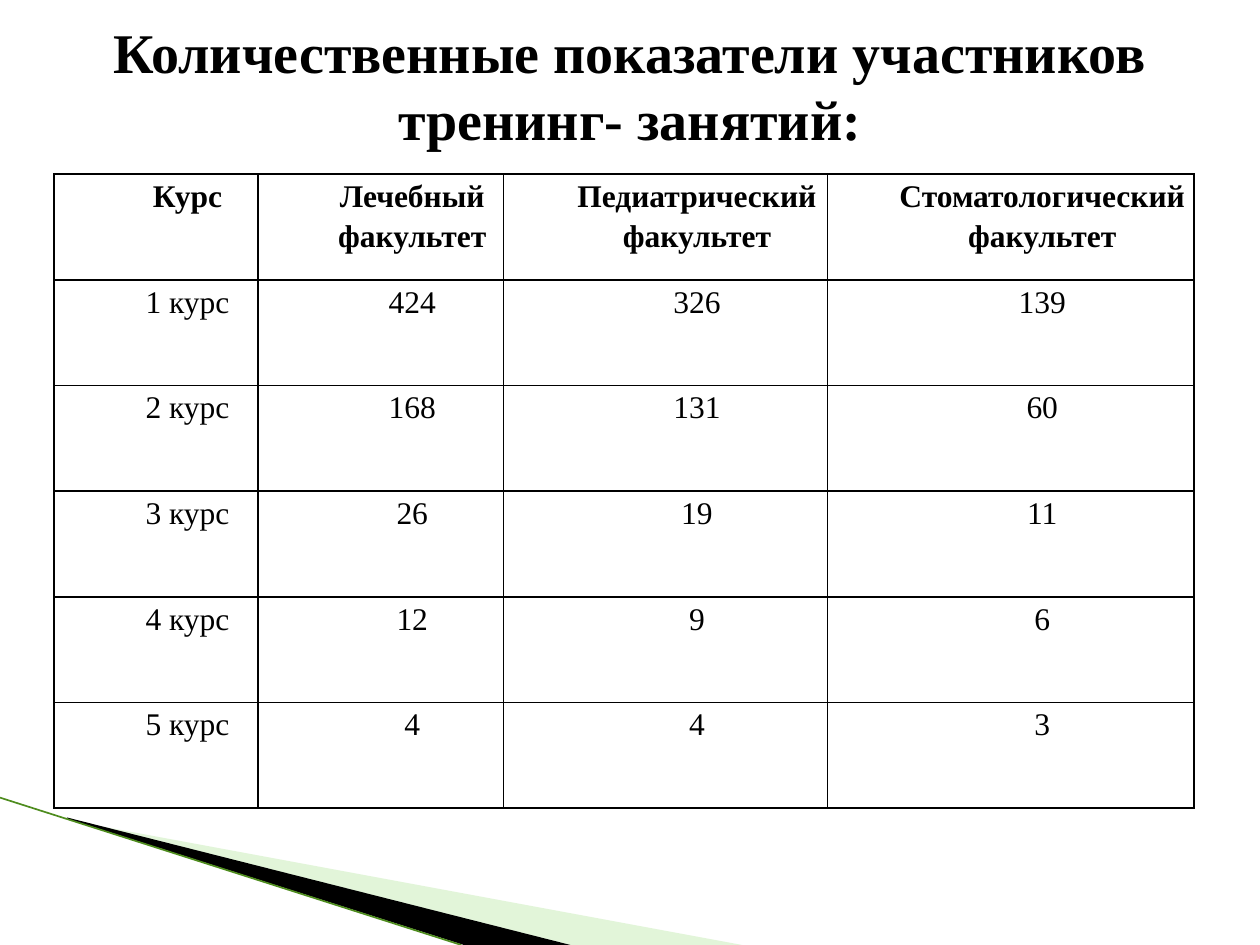
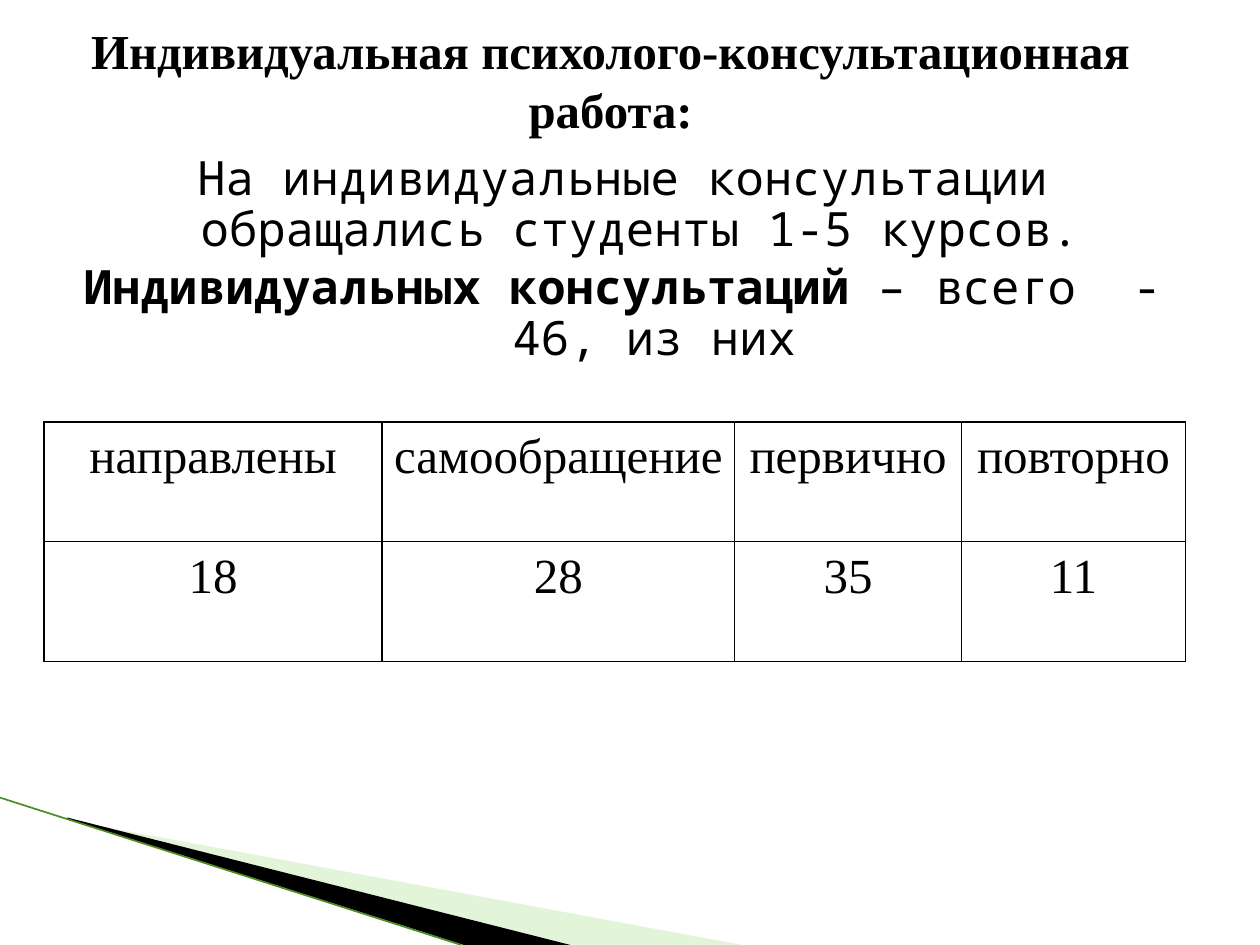
"""Build two slides on training participants and individual consultations."""
from lxml import etree
from pptx import Presentation
from pptx.dml.color import RGBColor
from pptx.enum import text
from pptx.oxml import ns
from pptx.util import Cm, Pt

BLACK = RGBColor(0x00, 0x00, 0x00)
PALE_GREEN = RGBColor(0xB8, 0xE7, 0xA1)
DARK_GREEN = RGBColor(0x4E, 0x8C, 0x1E)
SERIF = "Times New Roman"
MONO = "Noto Sans Mono"

PALE_WEDGE = [(1.4, 16.54), (14.96, 19.05), (11.5, 19.05), (1.4, 16.5)]
BLACK_WEDGE = [(1.35, 16.48), (11.5, 19.05), (9.35, 19.05), (1.37, 16.51)]

PARTICIPANTS = [
    ["Курс", "Лечебный факультет", "Педиатрический факультет", "Стоматологический факультет"],
    ["1 курс", "424", "326", "139"],
    ["2 курс", "168", "131", "60"],
    ["3 курс", "26", "19", "11"],
    ["4 курс", "12", "9", "6"],
    ["5 курс", "4", "4", "3"],
]
CONSULTATIONS = [
    ["направлены", "самообращение", "первично", "повторно"],
    ["18", "28", "35", "11"],
]
CONSULTATION_TEXT = [
    [("На индивидуальные консультации обращались студенты 1-5 курсов.", False)],
    [("Индивидуальных консультаций", True), (" – всего  -  46, из них", False)],
]


def add_element(parent, tag, **attributes):
    """Append a DrawingML child element and return it."""
    return etree.SubElement(parent, ns.qn(tag), attributes)


def set_font(font, name, size, bold=None):
    """Format a font in black."""
    font.name, font.size, font.bold = name, Pt(size), bold
    font.color.rgb = BLACK


def place(shape, left, top, width, height):
    """Move and resize a shape, in centimetres."""
    shape.left, shape.top, shape.width, shape.height = map(Cm, (left, top, width, height))


def add_wedge(slide, points, color):
    """Draw a filled outline without a border."""
    start, *others = [(Cm(x), Cm(y)) for x, y in points]
    builder = slide.shapes.build_freeform(*start)
    builder.add_line_segments(others)
    wedge = builder.convert_to_shape()
    wedge.shadow.inherit = False
    wedge.fill.solid()
    wedge.fill.fore_color.rgb = color
    wedge.line.fill.background()
    return wedge


def add_corner_band(slide):
    """Draw the corner band and move it to the slide master."""
    pale = add_wedge(slide, PALE_WEDGE, PALE_GREEN)
    solid = pale.element.spPr.find(ns.qn("a:solidFill"))
    add_element(solid[0], "a:alpha", val="40000")
    black = add_wedge(slide, BLACK_WEDGE, BLACK)
    edge = slide.shapes.add_connector(1, Cm(0), Cm(16.08), Cm(9.3), Cm(19.05))
    edge.line.color.rgb = DARK_GREEN
    edge.line.width = Pt(0.95)
    add_element(edge.element.spPr, "a:effectLst")
    tree = slide.slide_layout.slide_master.shapes.element
    for position, shape in enumerate((pale, black, edge)):
        shape.element.xpath(".//p:cNvPr")[0].set("id", str(100 + position))
        tree.insert(2 + position, shape.element)


def set_title(slide, wording, left, width, size, bottom_inset):
    """Fill and format the title placeholder."""
    title = slide.shapes.title
    place(title, left, 0.76, width, 3.18)
    frame = title.text_frame
    frame.text = wording
    frame.auto_size = text.MSO_AUTO_SIZE.NONE
    frame.vertical_anchor = text.MSO_ANCHOR.MIDDLE
    frame.margin_top, frame.margin_bottom = 0, Cm(bottom_inset)
    paragraph = frame.paragraphs[0]
    paragraph.alignment = text.PP_ALIGN.CENTER
    set_font(paragraph.font, SERIF, size, True)


def set_body(slide, paragraphs):
    """Fill the body placeholder with centred paragraphs of (wording, bold) runs."""
    body = slide.placeholders[1]
    place(body, 0.89, 2.92, 23.01, 5.21)
    frame = body.text_frame
    frame.auto_size = text.MSO_AUTO_SIZE.NONE
    frame.margin_top = Cm(0.2)
    for index, runs in enumerate(paragraphs):
        paragraph = frame.add_paragraph() if index else frame.paragraphs[0]
        properties = paragraph._p.get_or_add_pPr()
        properties.set("marL", str(Cm(1.02)))
        properties.set("indent", str(Cm(-0.71)))
        add_element(properties, "a:buNone")
        paragraph.alignment = text.PP_ALIGN.CENTER
        paragraph.line_spacing = 0.9
        paragraph.space_before = Pt(4 if index else 0)
        set_font(paragraph.font, MONO, 27)
        for wording, bold in runs:
            run = paragraph.add_run()
            run.text = wording
            run.font.bold = bold


def add_borders(cell):
    """Give a cell thin black lines on all sides."""
    properties = cell._tc.get_or_add_tcPr()
    for side in ("a:lnL", "a:lnR", "a:lnT", "a:lnB"):
        line = add_element(properties, side, w=str(Pt(1)))
        add_element(add_element(line, "a:solidFill"), "a:srgbClr", val=str(BLACK))


def add_grid(slide, rows, left, top, widths, row_height, size, indent=0, bold_header=False):
    """Add a ruled table with centred text."""
    frame = slide.shapes.add_table(len(rows), len(widths), Cm(left), Cm(top),
                                   Cm(sum(widths)), Cm(row_height * len(rows)))
    table = frame.table
    table.horz_banding = table.first_row = False
    for column, width in zip(table.columns, widths):
        column.width = Cm(width)
    for row_index, values in enumerate(rows):
        table.rows[row_index].height = Cm(row_height)
        for column_index, value in enumerate(values):
            cell = table.cell(row_index, column_index)
            add_borders(cell)
            cell.fill.background()
            cell.margin_left = cell.margin_right = Cm(0.18)
            cell.margin_top = cell.margin_bottom = 0
            cell.text = value
            paragraph = cell.text_frame.paragraphs[0]
            paragraph._p.get_or_add_pPr().set("marL", str(Cm(indent)))
            paragraph.alignment = text.PP_ALIGN.CENTER
            paragraph.line_spacing = 1.15
            set_font(paragraph.font, SERIF, size, bold_header and row_index == 0)


def main():
    """Build and save the presentation."""
    presentation = Presentation()
    presentation.slide_width, presentation.slide_height = Cm(25.4), Cm(19.05)
    layouts = presentation.slide_layouts

    slide = presentation.slides.add_slide(layouts.get_by_name("Title Only"))
    add_corner_band(slide)
    set_title(slide, "Количественные показатели участников тренинг- занятий:",
              1.27, 22.86, 32, 1.3)
    add_grid(slide, PARTICIPANTS, 1.09, 3.51, [4.11, 4.95, 6.53, 7.39], 2.13, 18,
             indent=1.27, bold_header=True)

    slide = presentation.slides.add_slide(layouts.get_by_name("Title and Content"))
    set_title(slide, "Индивидуальная психолого-консультационная работа:",
              0.51, 23.6, 27.9, 1.5)
    set_body(slide, CONSULTATION_TEXT)
    add_grid(slide, CONSULTATIONS, 0.89, 8.51, [6.81, 7.11, 4.57, 4.52], 2.41, 28)

    presentation.save("out.pptx")


if __name__ == "__main__":
    main()
